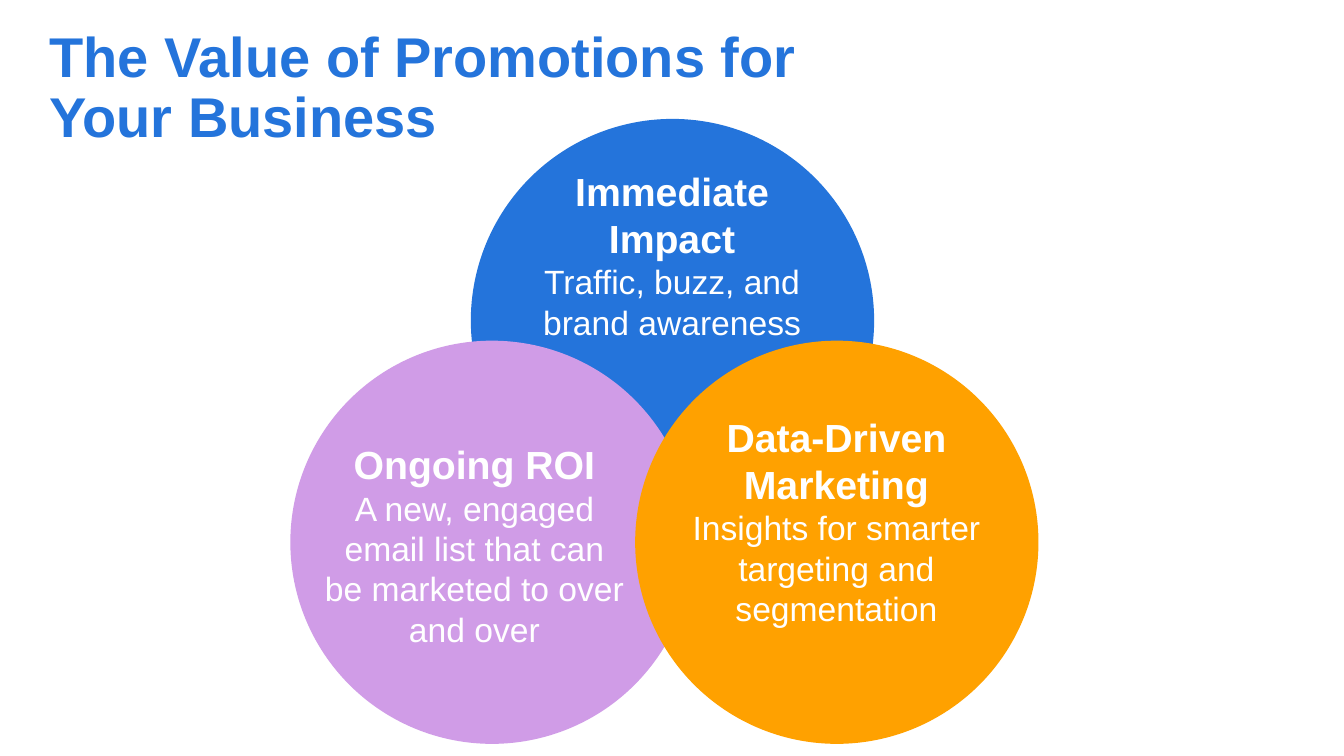
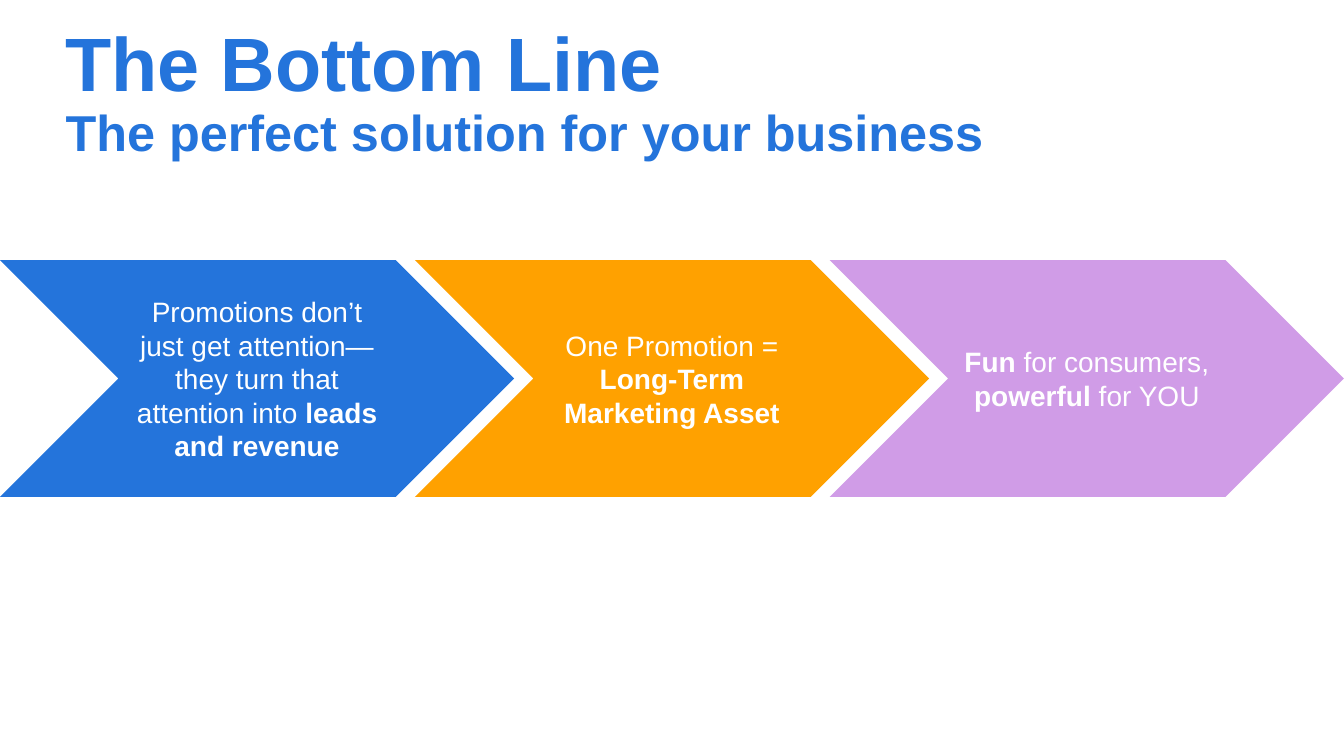
from dataclasses import dataclass

from pptx import Presentation
from pptx.dml.color import RGBColor
from pptx.enum.shapes import MSO_SHAPE
from pptx.enum.text import MSO_ANCHOR, MSO_AUTO_SIZE, PP_ALIGN
from pptx.util import Inches, Pt

CHEVRON, CIRCLE = MSO_SHAPE.CHEVRON, MSO_SHAPE.OVAL
LEFT, CENTER = PP_ALIGN.LEFT, PP_ALIGN.CENTER
TOP, MIDDLE = MSO_ANCHOR.TOP, MSO_ANCHOR.MIDDLE
NO_FIT, GROW = MSO_AUTO_SIZE.NONE, MSO_AUTO_SIZE.SHAPE_TO_FIT_TEXT
TITLE_ONLY = 5


@dataclass(frozen=True)
class Theme:
    font: str = "Arial"
    blue: str = "2474DB"
    purple: str = "D09CE7"
    orange: str = "FFA100"
    white: str = "FFFFFF"
    headline: int = 54
    title: int = 40
    subtitle: int = 36
    heading: int = 28
    body: int = 24
    step: int = 20


@dataclass(frozen=True)
class Box:
    left: float
    top: float
    width: float
    height: float

    def inside(self, left, top, width, height):
        return Box(self.left + left, self.top + top, width, height)

    def lengths(self):
        return [Inches(value) for value in (self.left, self.top, self.width, self.height)]


THEME = Theme()
PAGE = Box(0, 0, 13.33, 7.5)


def set_values(target, values):
    for name, value in values.items():
        setattr(target, name, value)


def write(frame, paragraphs, color, frame_format, para_format):
    set_values(frame, {"word_wrap": True, **frame_format})
    for index, spans in enumerate(paragraphs):
        para = frame.add_paragraph() if index else frame.paragraphs[0]
        set_values(para, para_format)
        for text, size, bold in spans:
            span = para.add_run()
            span.text = text
            set_values(span.font, {"name": THEME.font, "size": Pt(size), "bold": bold})
            span.font.color.rgb = RGBColor.from_string(color)


def add_filled_shape(page, kind, box, color):
    shape = page.shapes.add_shape(kind, *box.lengths())
    shape.shadow.inherit = False
    shape.fill.solid()
    shape.fill.fore_color.rgb = RGBColor.from_string(color)
    shape.line.fill.background()
    return shape


def add_titled_page(deck, box, lines):
    page = deck.slides.add_slide(deck.slide_layouts[TITLE_ONLY])
    title = page.shapes.title
    title.left, title.top, title.width, title.height = box.lengths()
    write(title.text_frame, [[(text, size, True)] for text, size in lines], THEME.blue,
          {"vertical_anchor": MIDDLE, "auto_size": NO_FIT},
          {"alignment": LEFT, "line_spacing": 0.9})
    return page


def add_overlapping_circles(page, box, benefits):
    diameter = 4
    for left, top, color, *_ in benefits:
        add_filled_shape(page, CIRCLE, box.inside(left, top, diameter, diameter), color)
    for left, top, _, inset, drop, height, heading, body in benefits:
        label_box = box.inside(left + inset, top + drop, 3.19, height)
        label = page.shapes.add_textbox(*label_box.lengths())
        write(label.text_frame,
              [[(heading, THEME.heading, True)], [(body, THEME.body, False)]],
              THEME.white, {"vertical_anchor": TOP, "auto_size": GROW},
              {"alignment": CENTER})


def add_chevron_row(page, box, steps):
    width = 5.1
    pitch = (box.width - width) / (len(steps) - 1)
    for index, (color, spans) in enumerate(steps):
        chevron = add_filled_shape(
            page, CHEVRON, box.inside(index * pitch, 0, width, box.height), color)
        write(chevron.text_frame, [[(text, THEME.step, bold) for text, bold in spans]],
              THEME.white, {"vertical_anchor": MIDDLE}, {"alignment": CENTER})


def build_value_page(deck):
    page = add_titled_page(deck, PAGE.inside(0.39, 0.16, 11.5, 1.45), [
        ("The Value of Promotions for", THEME.title),
        ("Your Business", THEME.title),
    ])
    add_overlapping_circles(page, PAGE.inside(2.88, 1.18, 7.42, 6.2), [
        (1.79, 0, THEME.blue, 0.4, 0.43, 1.85,
         "Immediate Impact", "Traffic, buzz, and brand awareness"),
        (0, 2.2, THEME.purple, 0.23, 0.94, 2.19,
         "Ongoing ROI", "A new, engaged email list that can be marketed to over and over"),
        (3.42, 2.2, THEME.orange, 0.4, 0.67, 2.66,
         "Data-Driven Marketing", "Insights for smarter targeting and segmentation"),
    ])


def build_bottom_line_page(deck):
    page = add_titled_page(deck, PAGE.inside(0.55, 0.21, 11.5, 1.45), [
        ("The Bottom Line", THEME.headline),
        ("The perfect solution for your business", THEME.subtitle),
    ])
    add_chevron_row(page, PAGE.inside(0, 2.58, PAGE.width, 2.35), [
        (THEME.blue, [
            ("Promotions don’t just get attention—they turn that attention into ", False),
            ("leads and revenue", True),
        ]),
        (THEME.orange, [("One Promotion = ", False), ("Long-Term Marketing Asset", True)]),
        (THEME.purple, [
            ("Fun", True), (" for consumers, ", False),
            ("powerful", True), (" for YOU", False),
        ]),
    ])


def main():
    deck = Presentation()
    set_values(deck, {"slide_width": Inches(PAGE.width), "slide_height": Inches(PAGE.height)})
    build_value_page(deck)
    build_bottom_line_page(deck)
    deck.save("out.pptx")


if __name__ == "__main__":
    main()
